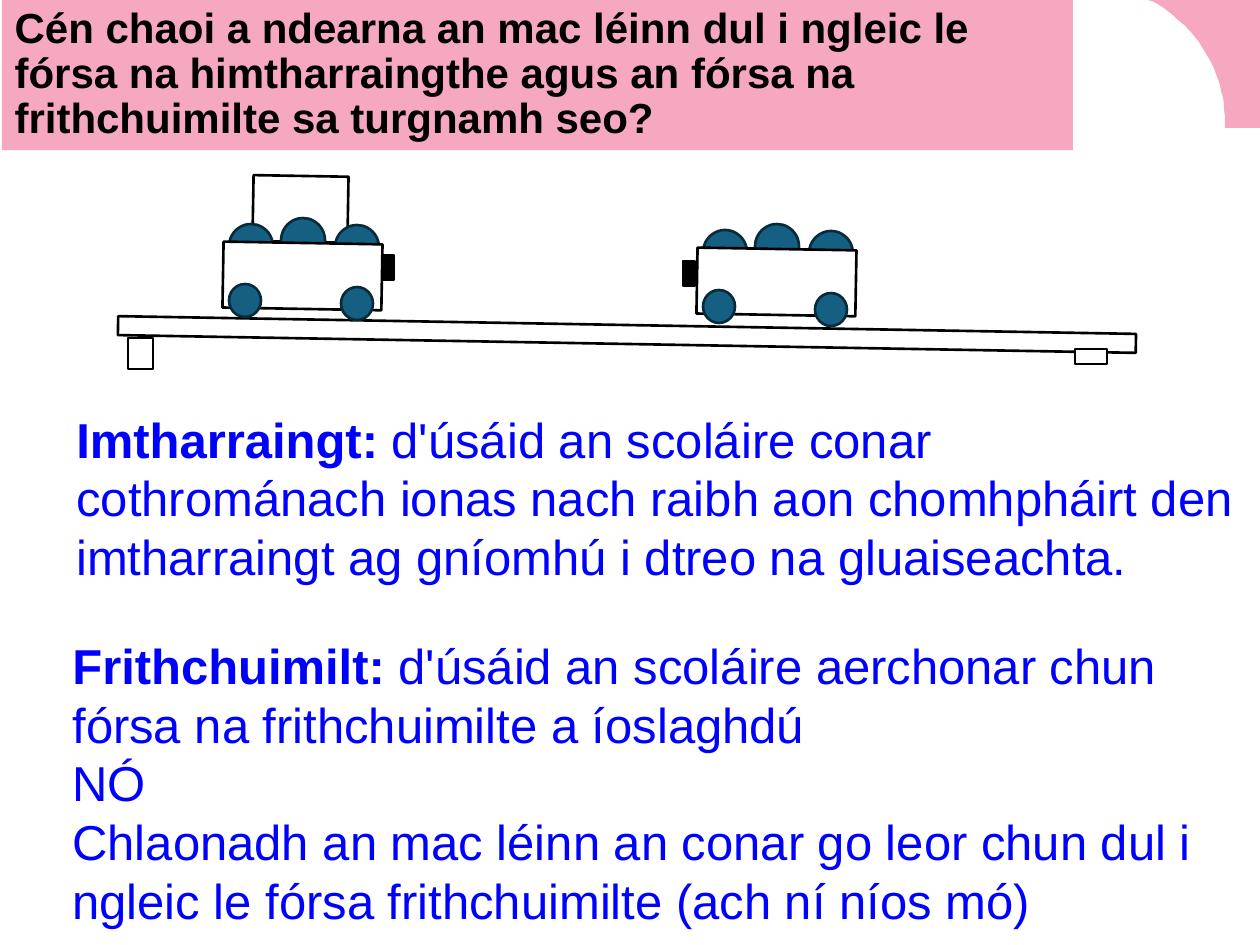
from pptx import Presentation
from pptx.dml.color import RGBColor
from pptx.enum.shapes import MSO_SHAPE as Shape
from pptx.enum.text import MSO_ANCHOR as Anchor, MSO_AUTO_SIZE as AutoSize, PP_ALIGN as Align
from pptx.util import Emu, Pt

PX = 914400 / 126
PINK, BLUE = "F6A8C1", "0000FF"


def paint(target, fill, line=None):
    target.shadow.inherit = False
    target.fill.solid()
    target.fill.fore_color.rgb = RGBColor.from_string(fill)
    if line:
        target.line.color.rgb = RGBColor.from_string(line)
        target.line.width = Pt(1.5)
    else:
        target.line.fill.background()


def add_part(kind, left, top, width, height, fill="FFFFFF", line="000000", rotation=0):
    box = [Emu(round(value * PX)) for value in (left, top, width, height)]
    shape = slide.shapes.add_shape(kind, *box)
    paint(shape, fill, line)
    shape.rotation = rotation


presentation = Presentation()
presentation.slide_width = Emu(round(1260 * PX))
presentation.slide_height = Emu(round(945 * PX))
slide = presentation.slides.add_slide(presentation.slide_layouts[5])

start, control_1, control_2, end = (1225, 122), (1225, 71), (1196, 26), (1154, 2)
curve = []
for step in range(25):
    t = step / 24
    curve.append([
        (1 - t) ** 3 * a + 3 * (1 - t) ** 2 * t * b + 3 * (1 - t) * t ** 2 * c + t ** 3 * d
        for a, b, c, d in zip(start, control_1, control_2, end)
    ])
builder = slide.shapes.build_freeform(1148, 0, scale=PX)
builder.add_line_segments([(1260, 0), (1260, 128), (1225, 128)] + curve, close=True)
paint(builder.convert_to_shape(), PINK)

title = slide.shapes.title
title.left, title.top = Emu(round(2 * PX)), 0
title.width, title.height = Emu(round(1071 * PX)), Emu(round(150 * PX))
title.fill.solid()
title.fill.fore_color.rgb = RGBColor.from_string(PINK)
frame = title.text_frame
frame.text = (
    "Cén chaoi a ndearna an mac léinn dul i ngleic le fórsa na himtharraingthe "
    "agus an fórsa na frithchuimilte sa turgnamh seo?"
)
frame.word_wrap = True
frame.auto_size = AutoSize.SHAPE_TO_FIT_TEXT
frame.vertical_anchor = Anchor.MIDDLE
paragraph = frame.paragraphs[0]
paragraph.alignment = Align.LEFT
paragraph.line_spacing = 0.9
font = paragraph.runs[0].font
font.name, font.size, font.bold = "Arial", Pt(24), True
font.color.rgb = RGBColor.from_string("000000")

answers = [
    (64, 403, 1184, 190, "Imtharraingt: ", [
        "d'úsáid an scoláire conar cothrománach ionas nach raibh aon chomhpháirt "
        "den imtharraingt ag gníomhú i dtreo na gluaiseachta.",
    ]),
    (60, 629, 1164, 310, "Frithchuimilt: ", [
        "d'úsáid an scoláire aerchonar chun fórsa na frithchuimilte a íoslaghdú",
        "NÓ",
        "Chlaonadh an mac léinn an conar go leor chun dul i ngleic le fórsa "
        "frithchuimilte (ach ní níos mó)",
    ]),
]
for left, top, width, height, term, lines in answers:
    box = [Emu(round(value * PX)) for value in (left, top, width, height)]
    frame = slide.shapes.add_textbox(*box).text_frame
    frame.word_wrap = True
    frame.auto_size = AutoSize.SHAPE_TO_FIT_TEXT
    paragraph = frame.paragraphs[0]
    paragraph.add_run().text = term
    for index, line in enumerate(lines):
        if index:
            paragraph.add_line_break()
        paragraph.add_run().text = line
    for index, run in enumerate(paragraph.runs):
        run.font.name, run.font.size, run.font.bold = "Arial", Pt(28), index == 0
        run.font.color.rgb = RGBColor.from_string(BLUE)

add_part(Shape.RECTANGLE, 253, 176, 95, 66, rotation=1)
add_part(Shape.RECTANGLE, 118, 325, 1018, 19, rotation=1)
for left, top, width, height in [(128, 338, 25, 31), (1075, 349, 32, 15)]:
    add_part(Shape.RECTANGLE, left, top, width, height)

for cart_left, cart_top, buffer_left in [(223, 243, 382), (697, 249, 683)]:
    for dx, dy in [(6, -19), (58, -25), (112, -18)]:
        add_part(Shape.OVAL, cart_left + dx, cart_top + dy, 44, 45, "156082", "092A39")
    add_part(Shape.RECTANGLE, cart_left, cart_top, 159, 66, rotation=1)
    for dx, dy in [(6, 41), (118, 44)]:
        add_part(Shape.OVAL, cart_left + dx, cart_top + dy, 32, 33, "156082", "092A39")
    add_part(Shape.RECTANGLE, buffer_left, cart_top + 12, 12, 25, "000000")

presentation.save("out.pptx")
